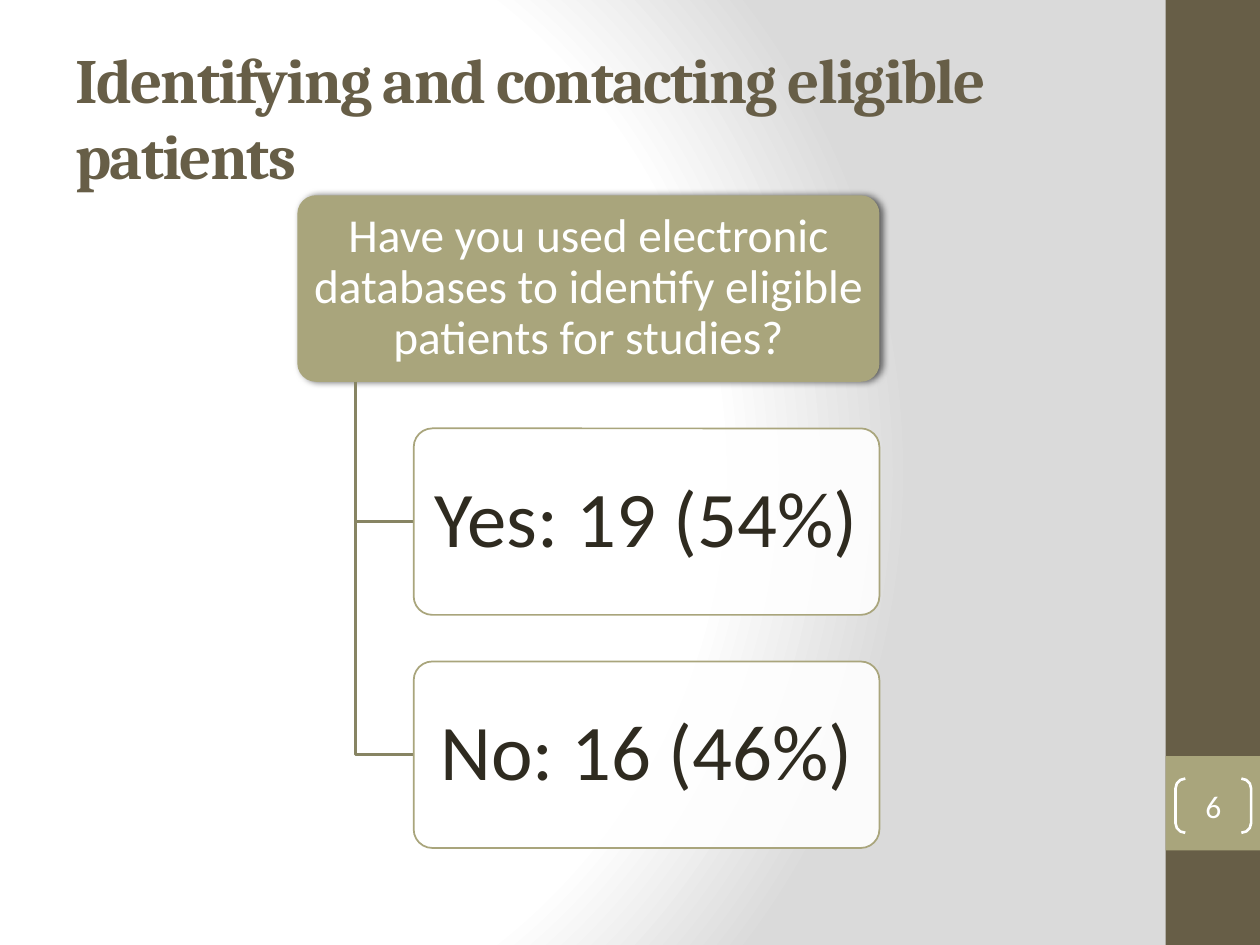
import pptx
import pptx.util
import pptx.dml.color
import pptx.enum.shapes
import pptx.enum.text
import pptx.oxml
import pptx.oxml.ns

Inches = pptx.util.Inches
Pt = pptx.util.Pt
Kind = pptx.enum.shapes.MSO_SHAPE
Align = pptx.enum.text.PP_ALIGN

TITLE = "Identifying and contacting eligible patients"
ASK = "Have you used electronic databases to identify eligible patients for studies?"
REPLIES = ["Yes: 19 (54%)", "No: 16 (46%)"]
NUMBER = "6"

THEME = {
    "head": "Cambria", "body": "Calibri",
    "dark": "675E47", "olive": "A9A57C", "line": "878463",
    "ink": "2F2B20", "white": "FFFFFF", "grey": "DADADA",
    "title": 36, "ask": 27, "reply": 45, "number": 18,
}

LEFT, TOP, WIDE, HIGH = 2.36, 1.55, 4.62, 1.48
STEP = HIGH * 1.25
STEM = LEFT + WIDE / 10
INNER = LEFT + WIDE / 5
BAR, EDGE = 9.25, 0.75


def color(name):
    return pptx.dml.color.RGBColor.from_string(THEME[name])


def parse(xml):
    space = pptx.oxml.ns.nsdecls("a")
    return pptx.oxml.parse_xml(xml.replace(">", f" {space}>", 1))


def paint(slide):
    slide.background.fill.solid()
    node = slide._element.find(".//" + pptx.oxml.ns.qn("p:bgPr"))
    stops = [(0, "white"), (75, "white"), (100, "grey")]
    marks = "".join(
        f'<a:gs pos="{at * 1000}"><a:srgbClr val="{THEME[name]}"/></a:gs>'
        for at, name in stops
    )
    node.replace(node[0], parse(
        f'<a:gradFill rotWithShape="1"><a:gsLst>{marks}</a:gsLst>'
        '<a:path path="circle"><a:fillToRect l="20000" t="50000" '
        'r="100000" b="50000"/></a:path></a:gradFill>'
    ))


def style(shape, fill=None, line=None, width=1):
    shape.shadow.inherit = False
    if fill:
        shape.fill.solid()
        shape.fill.fore_color.rgb = color(fill)
    else:
        shape.fill.background()
    if line:
        shape.line.color.rgb = color(line)
        shape.line.width = Pt(width)
    else:
        shape.line.fill.background()


def block(slide, kind, box, fill=None, line=None, width=1, round=None):
    shape = slide.shapes.add_shape(kind, *map(Inches, box))
    if round is not None:
        shape.adjustments[0] = round
    style(shape, fill, line, width)
    return shape


def write(shape, text, face, size, ink, inset, align=Align.CENTER):
    frame = shape.text_frame
    frame.word_wrap = True
    frame.vertical_anchor = pptx.enum.text.MSO_ANCHOR.MIDDLE
    frame.margin_left = frame.margin_right = Inches(inset[0])
    frame.margin_top = frame.margin_bottom = Inches(inset[1])
    para = frame.paragraphs[0]
    para.text = text
    para.alignment = align
    para.font.name = THEME[face]
    para.font.size = Pt(THEME[size])
    para.font.color.rgb = color(ink)
    return para


def title(slide):
    box = slide.shapes.add_textbox(*map(Inches, (0.5, 0.3, 8.33, 1.25)))
    para = write(box, TITLE, "head", "title", "dark", (0.1, 0.05), Align.LEFT)
    para.font.bold = True
    para.runs[0]._r.get_or_add_rPr().set("spc", "-100")


def ask(slide):
    card = block(slide, Kind.ROUNDED_RECTANGLE, (LEFT, TOP, WIDE, HIGH),
                 fill="olive", round=0.1)
    card._element.spPr.find(pptx.oxml.ns.qn("a:effectLst")).append(parse(
        f'<a:outerShdw blurRad="{Pt(4)}" dist="{Pt(2)}" dir="0">'
        '<a:srgbClr val="000000"><a:alpha val="60000"/></a:srgbClr>'
        '</a:outerShdw>'
    ))
    write(card, ASK, "body", "ask", "white", (0.05, 0.04)).line_spacing = 0.9


def reply(slide, row, text):
    top = TOP + STEP * row
    mid = top + HIGH / 2
    path = slide.shapes.build_freeform(Inches(STEM), Inches(TOP + HIGH))
    path.add_line_segments(
        [(Inches(STEM), Inches(mid)), (Inches(INNER), Inches(mid))], close=False
    )
    style(path.convert_to_shape(), line="line", width=2)
    card = block(slide, Kind.ROUNDED_RECTANGLE,
                 (INNER, top, LEFT + WIDE - INNER, HIGH),
                 fill="white", line="olive", round=0.1)
    tint = card._element.spPr.find(".//" + pptx.oxml.ns.qn("a:srgbClr"))
    tint.append(parse('<a:alpha val="90000"></a:alpha>'))
    write(card, text, "body", "reply", "ink", (0.08, 0.06)).line_spacing = 0.9


def main():
    deck = pptx.Presentation()
    deck.slide_width, deck.slide_height = Inches(10), Inches(7.5)
    slide = deck.slides.add_slide(deck.slide_layouts[6])
    paint(slide)
    block(slide, Kind.RECTANGLE, (BAR, 0, EDGE, 7.5), fill="dark")
    block(slide, Kind.RECTANGLE, (BAR, 6, EDGE, EDGE), fill="olive")
    title(slide)
    ask(slide)
    for row, text in enumerate(REPLIES, 1):
        reply(slide, row, text)
    badge = block(slide, Kind.DOUBLE_BRACKET, (9.33, 6.18, 0.6, 0.43),
                  line="white", width=1.5, round=0.18)
    write(badge, NUMBER, "body", "number", "white", (0, 0))
    deck.save("out.pptx")


if __name__ == "__main__":
    main()
